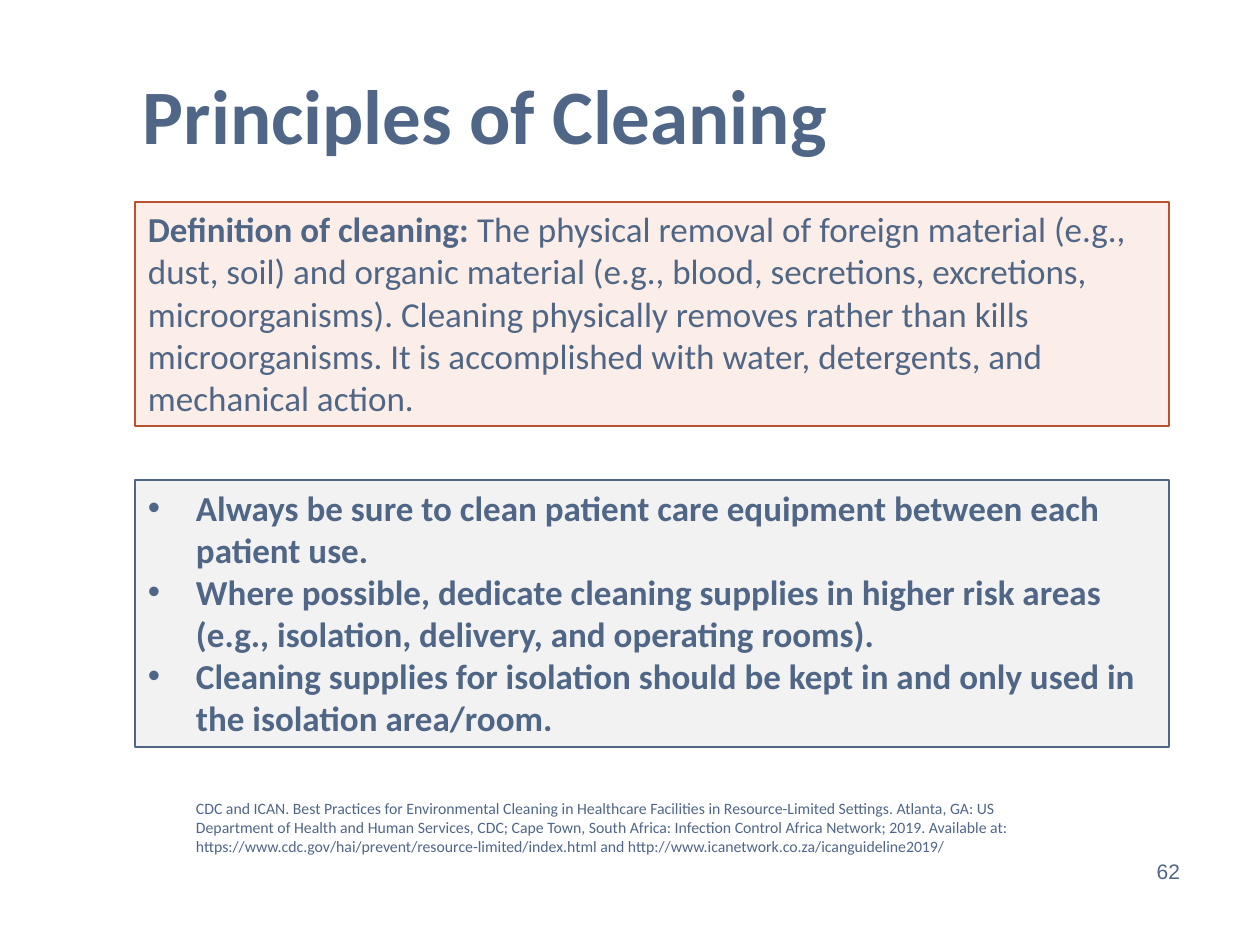
"""Build the slide on the principles of cleaning."""
from lxml import etree
from pptx import Presentation
from pptx import util as u
from pptx.dml.color import RGBColor
from pptx.enum import shapes, text
from pptx.oxml import ns

SLATE = RGBColor(0x50, 0x66, 0x87)
RUST = RGBColor(0xB8, 0x52, 0x31)
BLUSH = RGBColor(0xFB, 0xED, 0xE7)
PALE_GREY = RGBColor(0xF2, 0xF2, 0xF2)
PX = u.Inches(1) / 126


def px(*lengths):
    return [round(length * PX) for length in lengths]


def write(shape, paragraphs, size, face="Calibri", align=text.PP_ALIGN.LEFT,
          anchor=text.MSO_ANCHOR.TOP, inset=(13, 6)):
    frame = shape.text_frame
    side, end = px(*inset)
    frame_format = {"word_wrap": True, "auto_size": text.MSO_AUTO_SIZE.NONE,
                    "vertical_anchor": anchor, "margin_left": side,
                    "margin_right": side, "margin_top": end, "margin_bottom": end}
    for name, value in frame_format.items():
        setattr(frame, name, value)
    for index, pieces in enumerate(paragraphs):
        paragraph = frame.paragraphs[0] if index == 0 else frame.add_paragraph()
        paragraph.alignment = align
        paragraph.space_before = u.Pt(0)
        for wording, bold in pieces:
            run = paragraph.add_run()
            run.text = wording
            run.font.color.rgb = SLATE
            for name, value in {"size": u.Pt(size), "name": face, "bold": bold}.items():
                setattr(run.font, name, value)


deck = Presentation()
deck.slide_width, deck.slide_height = px(1260, 945)
slide = deck.slides.add_slide(deck.slide_layouts[1])

title = slide.shapes.title
title.left, title.top, title.width, title.height = px(134, 63, 993, 154)
write(title, [[("Principles of Cleaning", True)]], 44, inset=(9, 5))

definition = slide.shapes.add_shape(shapes.MSO_SHAPE.RECTANGLE, *px(135, 202, 1034, 224))
definition.shadow.inherit = False
write(definition, [[
    ("Definition of cleaning: ", True),
    ("The physical removal of foreign material (e.g., dust, soil) and organic material "
     "(e.g., blood, secretions, excretions, microorganisms). Cleaning physically removes "
     "rather than kills microorganisms. It is accomplished with water, detergents, and "
     "mechanical action.", False),
]], 20)

practices = slide.placeholders[1]
practices.left, practices.top, practices.width, practices.height = px(135, 480, 1034, 267)
write(practices, [[(practice, True)] for practice in (
    "Always be sure to clean patient care equipment between each patient use.",
    "Where possible, dedicate cleaning supplies in higher risk areas "
    "(e.g., isolation, delivery, and operating rooms).",
    "Cleaning supplies for isolation should be kept in and only used in "
    "the isolation area/room.",
)], 20)
[indent] = px(48)
for paragraph in practices.text_frame.paragraphs:
    properties = paragraph._p.get_or_add_pPr()
    properties.set("marL", str(indent))
    properties.set("indent", str(-indent))
    bullet_color = etree.SubElement(properties, ns.qn("a:buClr"))
    etree.SubElement(bullet_color, ns.qn("a:srgbClr"), val=str(SLATE))
    etree.SubElement(properties, ns.qn("a:buFont"), typeface="Arial")
    etree.SubElement(properties, ns.qn("a:buChar"), char="•")

for panel, fill, outline in ((definition, BLUSH, RUST), (practices, PALE_GREY, SLATE)):
    panel.fill.solid()
    panel.fill.fore_color.rgb = fill
    panel.line.color.rgb = outline
    panel.line.width = u.Pt(0.75)

citation = slide.shapes.add_textbox(*px(183, 793, 892, 71))
write(citation, [[(
    "CDC and ICAN. Best Practices for Environmental Cleaning in Healthcare Facilities in "
    "Resource-Limited Settings. Atlanta, GA: US Department of Health and Human Services, "
    "CDC; Cape Town, South Africa: Infection Control Africa Network; 2019. Available at: "
    "https://www.cdc.gov/hai/prevent/resource-limited/index.html and "
    "http://www.icanetwork.co.za/icanguideline2019/", False)]], 9)

page_number = slide.shapes.add_textbox(*px(1024, 851, 165, 41))
write(page_number, [[("62", False)]], 12, "Arial", text.PP_ALIGN.RIGHT,
      text.MSO_ANCHOR.MIDDLE, (9, 5))

deck.save("out.pptx")
